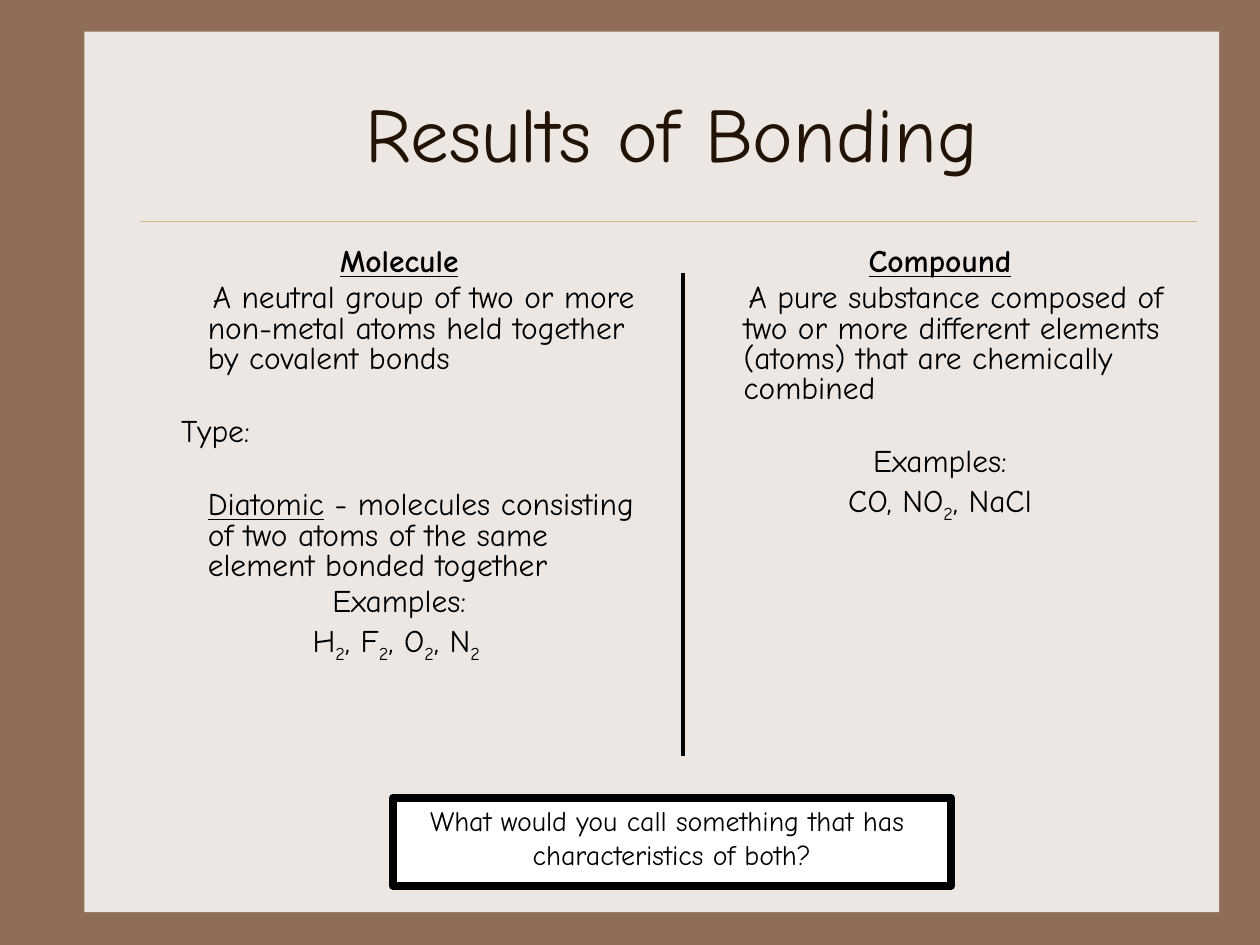
import pptx
import pptx.util
import pptx.dml.color
import pptx.enum.shapes
import pptx.enum.text
import pptx.oxml.ns
import lxml.etree

Cm = pptx.util.Cm
Pt = pptx.util.Pt
RGBColor = pptx.dml.color.RGBColor
Align = pptx.enum.text.PP_ALIGN
Anchor = pptx.enum.text.MSO_ANCHOR

BROWN = RGBColor(0x90, 0x6D, 0x58)
CREAM = RGBColor(0xED, 0xE7, 0xE3)
GOLD = RGBColor(0xCB, 0xBD, 0x83)
DARK = RGBColor(0x22, 0x13, 0x04)
BLACK = RGBColor(0, 0, 0)
WHITE = RGBColor(255, 255, 255)

TIGHT, WIDE = 3.6, 24.5  # points above a paragraph
HANG = 0.97  # left margin of body text


class Deck:
    font = "Comic Neue"

    def __init__(self, wide, high, back):
        self.file = pptx.Presentation()
        self.file.slide_width, self.file.slide_height = Cm(wide), Cm(high)
        self.slide = self.file.slides.add_slide(self.file.slide_layouts[6])
        fill = self.slide.background.fill
        fill.solid()
        fill.fore_color.rgb = back

    def rect(self, x, y, w, h, color, edge=None, width=0):
        kind = pptx.enum.shapes.MSO_SHAPE.RECTANGLE
        shape = self.slide.shapes.add_shape(kind, Cm(x), Cm(y), Cm(w), Cm(h))
        shape.shadow.inherit = False
        shape.fill.solid()
        shape.fill.fore_color.rgb = color
        if edge is None:
            shape.line.fill.background()
        else:
            shape.line.color.rgb = edge
            shape.line.width = Pt(width)
        return shape

    def line(self, x1, y1, x2, y2, color, width):
        kind = pptx.enum.shapes.MSO_CONNECTOR.STRAIGHT
        line = self.slide.shapes.add_connector(kind, Cm(x1), Cm(y1), Cm(x2), Cm(y2))
        line.line.color.rgb = color
        line.line.width = Pt(width)
        tag = pptx.oxml.ns.qn("a:effectLst")
        lxml.etree.SubElement(line._element.spPr, tag)

    def text(self, x, y, w, h):
        box = self.slide.shapes.add_textbox(Cm(x), Cm(y), Cm(w), Cm(h))
        box.text_frame.word_wrap = True
        return box.text_frame

    def style(self, para, size, color=BLACK):
        para.alignment = Align.CENTER
        for run in para.runs:
            run.font.name = self.font
            run.font.size = Pt(size)
            run.font.color.rgb = color

    def column(self, x, y, w, h, rows):
        """Rows hold a style, the space above, and text runs, marked _ or ~
        at the front when underlined or lowered."""
        frame = self.text(x, y, w, h)
        for i, (kind, gap, parts) in enumerate(rows):
            para = frame.add_paragraph() if i else frame.paragraphs[0]
            para.line_spacing = 0.8
            para.space_before = Pt(gap)
            for part in parts:
                run = para.add_run()
                run.text = part.lstrip("_~")
                if part.startswith("_"):
                    run.font.underline = True
                if part.startswith("~"):
                    run.font._element.set("baseline", "-25000")
                if kind == "head":
                    run.font.bold = True
            self.style(para, 18)
            if kind in INDENT:
                para.alignment = Align.LEFT
                props = para._p.get_or_add_pPr()
                props.set("marL", str(Cm(HANG)))
                props.set("indent", str(Cm(INDENT[kind])))


INDENT = {"body": 0.1, "label": -0.54, "term": 0}

MOLECULE = [
    ("head", 0, ["_Molecule"]),
    ("body", TIGHT, ["A neutral group of two or more non-metal atoms held "
                     "together by covalent bonds"]),
    ("label", WIDE, ["Type:"]),
    ("term", WIDE, ["_Diatomic", " - molecules consisting of two atoms of "
                    "the same element bonded together"]),
    ("mid", TIGHT, ["Examples:"]),
    ("mid", TIGHT, ["H", "~2", ", F", "~2", ", O", "~2", ", N", "~2 "]),
]
COMPOUND = [
    ("head", 0, ["_Compound"]),
    ("body", TIGHT, ["A pure substance composed of two or more different "
                     "elements (atoms) that are chemically combined"]),
    ("mid", WIDE, ["Examples:"]),
    ("mid", TIGHT, ["CO, NO", "~2", ", NaCl"]),
]


def main():
    deck = Deck(25.4, 19.05, BROWN)
    deck.rect(1.7, 0.64, 22.88, 17.75, CREAM)
    deck.line(2.82, 4.45, 24.13, 4.45, GOLD, 0.25)

    title = deck.text(2.97, 1.07, 21.16, 3.18)
    title.vertical_anchor = Anchor.MIDDLE
    title.text = "Results of Bonding"
    deck.style(title.paragraphs[0], 44, DARK)

    deck.column(2.97, 4.88, 10.16, 10.59, MOLECULE)
    deck.column(13.77, 4.88, 10.36, 10.16, COMPOUND)
    deck.line(13.77, 5.51, 13.77, 15.24, BLACK, 2.25)

    prompt = deck.rect(7.92, 16.08, 11.25, 1.78, WHITE, BLACK, 4.5).text_frame
    prompt.word_wrap = False
    prompt.vertical_anchor = Anchor.TOP
    prompt.text = ("What would you call something that has \n"
                   "characteristics of both?")
    for para in prompt.paragraphs:
        deck.style(para, 16)

    deck.file.save("out.pptx")


if __name__ == "__main__":
    main()
